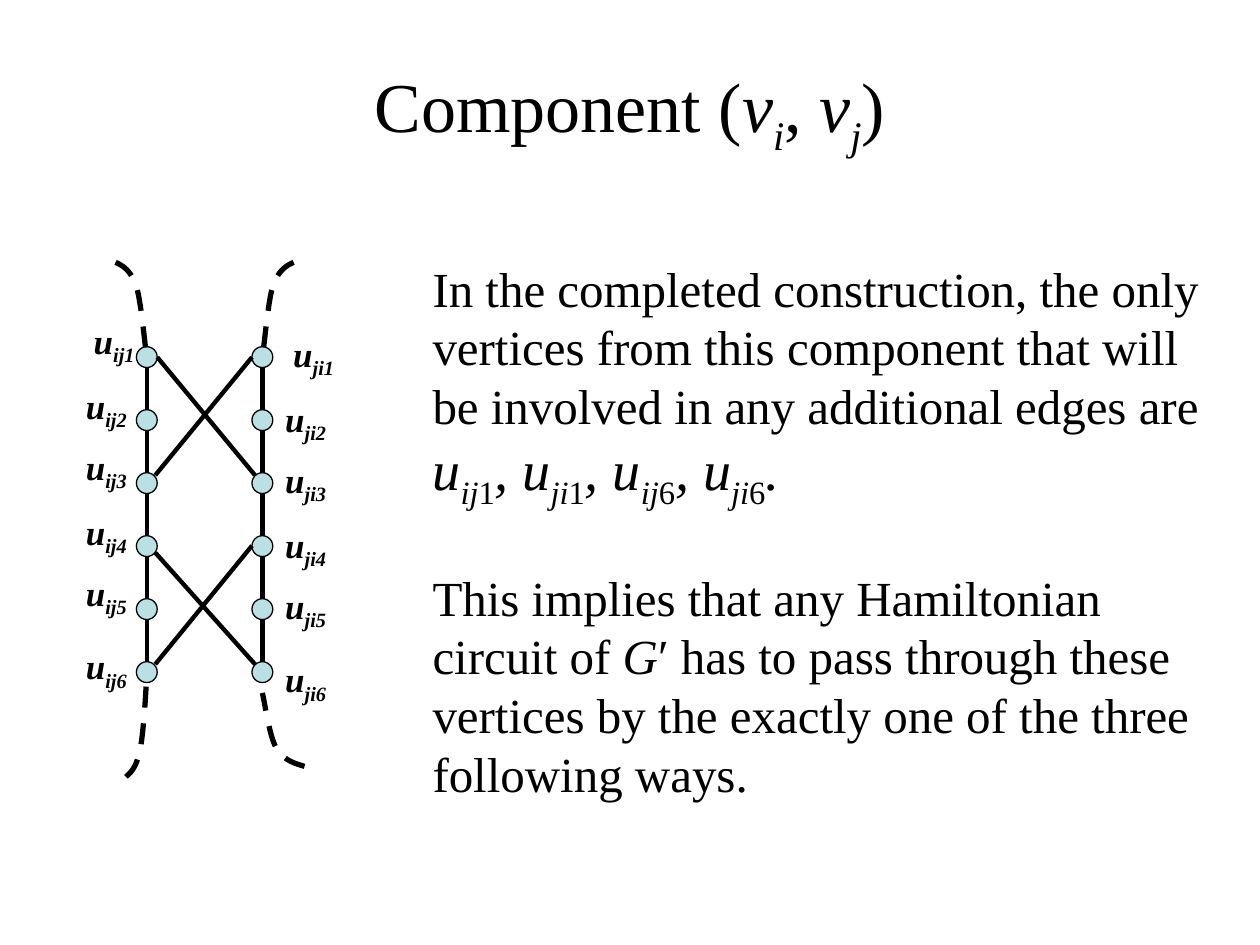
from pptx import Presentation
from pptx.dml.color import RGBColor
from pptx.enum.dml import MSO_LINE_DASH_STYLE as Dash
from pptx.enum.shapes import MSO_CONNECTOR as Connector, MSO_SHAPE as Shape
from pptx.enum.text import MSO_ANCHOR as Anchor, MSO_AUTO_SIZE as Fit, PP_ALIGN as Align
from pptx.oxml.ns import qn
from pptx.util import Cm, Pt

BLACK, NODE_FILL = "000000", "BBE0E3"
LEFT_X, RIGHT_X = 2.96, 5.29
ROWS = [7.2 + 1.27 * row for row in range(6)]
RADIUS = 0.21
LABEL_TOPS = [6.31, 7.62, 8.85, 10.16, 11.39, 12.87]
CROSSINGS = [
    (3.13, 11.14, 5.14, 13.39),
    (5.08, 11.0, 3.13, 13.39),
    (5.08, 7.2, 3.13, 9.58),
    (3.17, 7.2, 5.14, 9.58),
]
TOP_LEFT_TAIL = [(2.33, 5.29), (2.49, 5.36), (2.64, 5.46), (2.75, 5.77),
                 (2.85, 6.1), (2.92, 6.96), (2.96, 7.2)]
TOP_RIGHT_TAIL = [(LEFT_X + RIGHT_X - x, y) for x, y in TOP_LEFT_TAIL]
BOTTOM_LEFT_TAIL = [(2.54, 15.66), (2.64, 15.57), (2.74, 15.49), (2.82, 15.14),
                    (2.9, 14.78), (2.95, 13.82), (2.96, 13.55)]
BOTTOM_RIGHT_TAIL = [(6.14, 15.45), (5.93, 15.39), (5.71, 15.32), (5.57, 15.08),
                     (5.43, 14.84), (5.34, 14.17), (5.29, 13.97)]
ITALIC = {"italic": True}
SUBSCRIPT = {"italic": True, "baseline": -25}
UPRIGHT_SUBSCRIPT = {"baseline": -25}


def color(value):
    """Turn a hex string into a colour."""
    return RGBColor.from_string(value)


def set_attributes(target, values):
    """Set every attribute named in a dict."""
    for name, value in values.items():
        setattr(target, name, value)


def style_line(line, width):
    """Give a line its width and black colour."""
    line.width = Pt(width)
    line.fill.solid()
    line.fill.fore_color.rgb = color(BLACK)


def add_spans(para, spans, size, **common):
    """Fill a paragraph with (text, format) spans."""
    for text, values in spans:
        span = para.add_run()
        span.text = text
        formats = {"name": "Times New Roman", "size": Pt(size), **common, **values}
        baseline = formats.pop("baseline", 0)
        set_attributes(span.font, formats)
        span.font.color.rgb = color(BLACK)
        if baseline:
            span._r.get_or_add_rPr().set("baseline", str(baseline * 1000))


def add_text_frame(slide, left, top, width, height, **frame_values):
    """Add a text box and return its text frame."""
    box = slide.shapes.add_textbox(Cm(left), Cm(top), Cm(width), Cm(height))
    set_attributes(box.text_frame, {"word_wrap": True, **frame_values})
    return box.text_frame


def add_title(slide):
    """Add the centred slide title."""
    frame = add_text_frame(slide, 1.27, 0.64, 22.86, 3.18, vertical_anchor=Anchor.MIDDLE)
    para = frame.paragraphs[0]
    para.alignment = Align.CENTER
    spans = [("Component (", {}), ("v", ITALIC), ("i", SUBSCRIPT), (", ", {}),
             ("v", ITALIC), ("j", SUBSCRIPT), (")", {})]
    add_spans(para, spans, 40)


def add_node(slide, x, y):
    """Add a vertex centred on a point."""
    node = slide.shapes.add_shape(
        Shape.OVAL, Cm(x - RADIUS), Cm(y - RADIUS), Cm(2 * RADIUS), Cm(2 * RADIUS))
    node.shadow.inherit = False
    node.fill.solid()
    node.fill.fore_color.rgb = color(NODE_FILL)
    style_line(node.line, 0.75)


def add_edge(slide, *ends):
    """Add a straight edge from x, y to x, y."""
    edge = slide.shapes.add_connector(Connector.STRAIGHT, *map(Cm, ends))
    style_line(edge.line, 2.5)
    properties = edge._element.spPr
    properties.append(properties.makeelement(qn("a:effectLst"), {}))


def bezier_points(controls, steps=12):
    """Sample a chain of cubic curves."""
    points = [controls[0]]
    for first in range(0, len(controls) - 1, 3):
        a, b, c, d = controls[first:first + 4]
        for step in range(1, steps + 1):
            t = step / steps
            weights = ((1 - t) ** 3, 3 * t * (1 - t) ** 2, 3 * t * t * (1 - t), t ** 3)
            points.append(tuple(
                sum(weight * value for weight, value in zip(weights, axis))
                for axis in zip(a, b, c, d)))
    return points


def add_tail(slide, controls):
    """Add a dashed curve leaving the component."""
    start, *rest = [(Cm(x), Cm(y)) for x, y in bezier_points(controls)]
    builder = slide.shapes.build_freeform(*start)
    builder.add_line_segments(rest, close=False)
    tail = builder.convert_to_shape()
    tail.shadow.inherit = False
    tail.fill.background()
    style_line(tail.line, 3)
    tail.line.dash_style = Dash.DASH


def add_label(slide, subscript, left, top):
    """Add the name of a vertex."""
    frame = add_text_frame(slide, left, top, 1.35, 1.09,
                           word_wrap=False, auto_size=Fit.SHAPE_TO_FIT_TEXT)
    spans = [("u", ITALIC), (subscript, SUBSCRIPT)]
    add_spans(frame.paragraphs[0], spans, 20, bold=True)


def add_explanation(slide):
    """Add the text beside the graph."""
    frame = add_text_frame(slide, 8.47, 5.08, 16.08, 11.2, auto_size=Fit.SHAPE_TO_FIT_TEXT)
    add_spans(frame.paragraphs[0], [(
        "In the completed construction, the only vertices from this component "
        "that will be involved in any additional edges are", {})], 28)
    vertices = []
    for pair, number in [("ij", "1"), ("ji", "1"), ("ij", "6"), ("ji", "6")]:
        lead = ", u" if vertices else "u"
        vertices += [(lead, ITALIC), (pair, SUBSCRIPT), (number, UPRIGHT_SUBSCRIPT)]
    add_spans(frame.add_paragraph(), vertices + [(".", ITALIC)], 32)
    conclusion = frame.add_paragraph()
    conclusion.space_before = Pt(32)
    add_spans(conclusion, [
        ("This implies that any Hamiltonian circuit of ", {}), ("G", ITALIC),
        ("′ has to pass through these vertices by the exactly one of the three "
         "following ways.", {})], 28)


def add_graph(slide):
    """Add the vertices, edges, names and tails of the component."""
    for x in (LEFT_X, RIGHT_X):
        for y in ROWS:
            add_node(slide, x, y)
        for upper, lower in zip(ROWS, ROWS[1:]):
            add_edge(slide, x, upper + RADIUS, x, lower - RADIUS)
    for ends in CROSSINGS:
        add_edge(slide, *ends)
    for number, top in enumerate(LABEL_TOPS, 1):
        left = 1.64 if number == 1 else 1.48
        add_label(slide, f"ij{number}", left, top)
        add_label(slide, f"ji{number}", left + 4.02, top + 0.26)
    for controls in (TOP_LEFT_TAIL, TOP_RIGHT_TAIL, BOTTOM_LEFT_TAIL, BOTTOM_RIGHT_TAIL):
        add_tail(slide, controls)


def main():
    """Build and save the deck."""
    deck = Presentation()
    deck.slide_width, deck.slide_height = Cm(25.4), Cm(19.05)
    slide = deck.slides.add_slide(deck.slide_layouts[6])
    add_title(slide)
    add_graph(slide)
    add_explanation(slide)
    deck.save("out.pptx")


if __name__ == "__main__":
    main()
